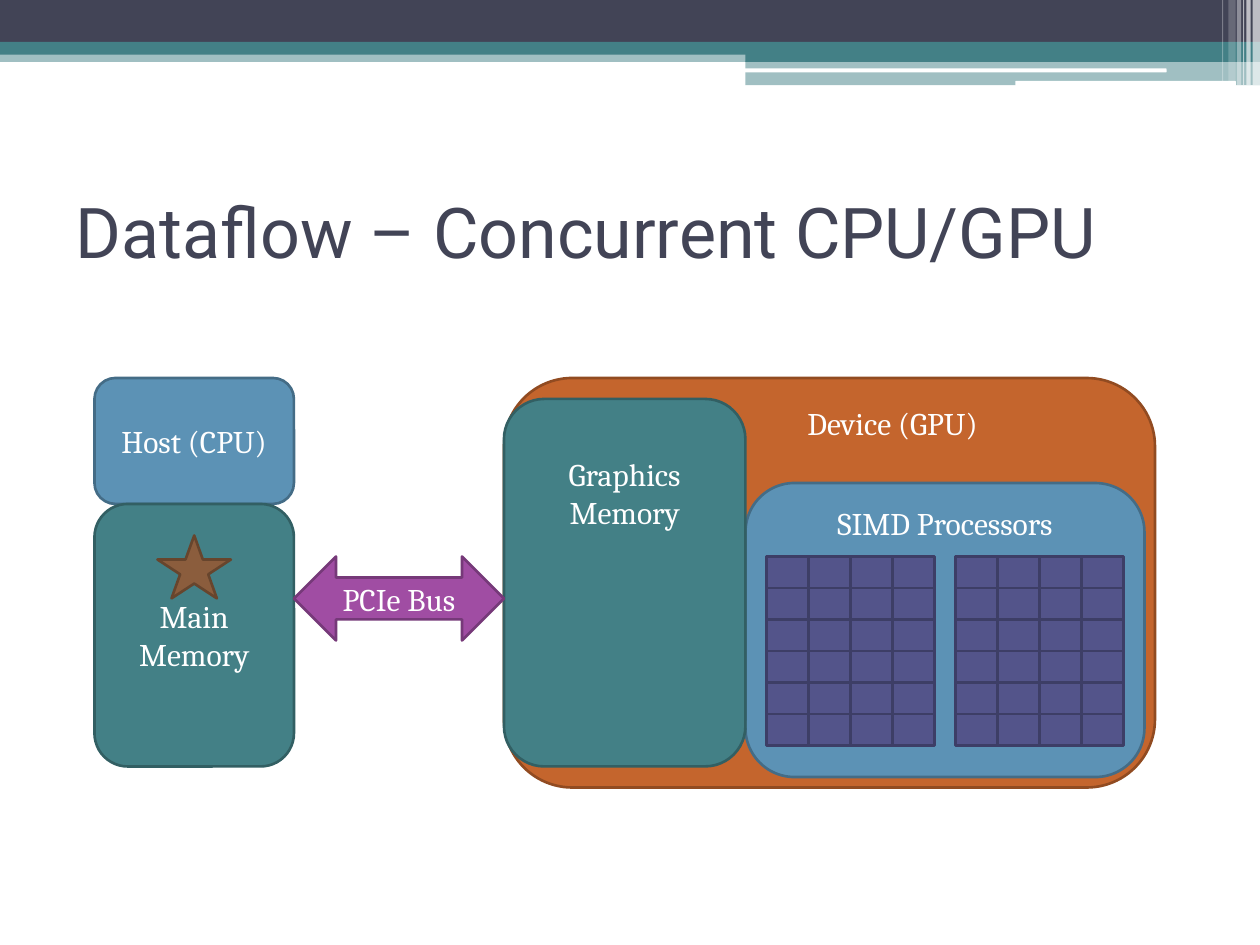
"""Build the slide on dataflow between CPU and GPU."""
import dataclasses
import itertools
import typing

import lxml.etree
import pptx
import pptx.dml.color
import pptx.enum.shapes
import pptx.enum.text
import pptx.oxml.ns
import pptx.util

SCALE = 7620
KIND = pptx.enum.shapes.MSO_SHAPE
ANCHOR = pptx.enum.text.MSO_ANCHOR
ALIGN = pptx.enum.text.PP_ALIGN
HUES = {
    "white": "FFFFFF", "ink": "424456",
    "teal": "438086", "teal_edge": "325F63",
    "blue": "5C92B5", "blue_edge": "446C86",
    "rust": "C4652D", "rust_edge": "914B21",
    "core": "53548A", "core_edge": "3D3E66",
    "plum": "A04DA3", "plum_edge": "763979",
    "brown": "8B5D3D", "brown_edge": "67452D",
}


@dataclasses.dataclass(frozen=True)
class Bar:
    left: int
    top: int
    width: int
    height: int
    hue: str
    alpha: int = 100
    kind: KIND = KIND.RECTANGLE


@dataclasses.dataclass(frozen=True)
class Block:
    left: int
    top: int
    width: int
    height: int
    hue: str
    text: str = ""
    kind: KIND = KIND.FLOWCHART_ALTERNATE_PROCESS
    anchor: ANCHOR = ANCHOR.MIDDLE
    inset: int = 12
    drop: int = 6


BARS = [
    Bar(0, 48, 1200, 11, "teal", 50),
    Bar(0, 0, 1200, 41, "ink"),
    Bar(0, 40, 1200, 12, "teal"),
    Bar(710, 47, 490, 12, "teal"),
    Bar(710, 58, 490, 23, "teal", 50),
    Bar(709, 65, 402, 4, "white", kind=KIND.ROUNDED_RECTANGLE),
    Bar(967, 77, 210, 5, "white", kind=KIND.ROUNDED_RECTANGLE),
    Bar(1193, 0, 7, 81, "white", 65),
    Bar(1187, 0, 4, 81, "white", 65),
    Bar(1184, 0, 1, 81, "white", 60),
    Bar(1178, 0, 4, 81, "white", 40),
    Bar(1170, 0, 7, 77, "white", 20),
    Bar(1164, 0, 1, 77, "white", 30),
]
BACK = [
    Block(90, 360, 190, 120, "blue", "Host (CPU)"),
    Block(90, 480, 190, 250, "teal", "Main Memory"),
    Block(480, 360, 620, 390, "rust", "Device (GPU)", anchor=ANCHOR.TOP, inset=132),
    Block(710, 460, 380, 280, "blue", "SIMD Processors", anchor=ANCHOR.TOP),
]
FRONT = [
    Block(480, 380, 230, 350, "teal", "Graphics Memory", anchor=ANCHOR.TOP, drop=42),
    Block(280, 530, 200, 80, "plum", "PCIe Bus", KIND.LEFT_RIGHT_ARROW),
    Block(150, 510, 70, 60, "brown", kind=KIND.STAR_5_POINT),
]


def px(size: int) -> pptx.util.Emu:
    """Turn px into EMU."""
    return pptx.util.Emu(size * SCALE)


def tint(name: str) -> pptx.dml.color.RGBColor:
    """Look up a colour."""
    return pptx.dml.color.RGBColor.from_string(HUES[name])


def add_form(shapes: typing.Any, item: Bar | Block) -> typing.Any:
    """Add a filled shape without shadow."""
    form = shapes.add_shape(
        item.kind, px(item.left), px(item.top), px(item.width), px(item.height))
    form.shadow.inherit = False
    form.fill.solid()
    form.fill.fore_color.rgb = tint(item.hue)
    return form


def add_text(frame: typing.Any, text: str, face: str, size: int, hue: str, align: ALIGN) -> None:
    """Write one styled run in the first paragraph."""
    line = frame.paragraphs[0]
    line.alignment = align
    run = line.add_run()
    run.text = text
    run.font.name = face
    run.font.size = pptx.util.Pt(size)
    run.font.color.rgb = tint(hue)


def draw_bar(shapes: typing.Any, bar: Bar) -> None:
    """Draw a band of the header."""
    form = add_form(shapes, bar)
    form.line.fill.background()
    if bar.alpha < 100:
        qn = pptx.oxml.ns.qn
        shade = form.element.spPr.find(f"{qn('a:solidFill')}/{qn('a:srgbClr')}")
        lxml.etree.SubElement(shade, qn("a:alpha"), val=str(bar.alpha * 1000))


def draw_block(shapes: typing.Any, block: Block) -> None:
    """Draw an outlined part with its label."""
    form = add_form(shapes, block)
    form.line.color.rgb = tint(block.hue + "_edge")
    form.line.width = pptx.util.Pt(1.5)
    if block.text:
        frame = form.text_frame
        frame.word_wrap = True
        frame.vertical_anchor = block.anchor
        frame.margin_left = px(block.inset)
        frame.margin_top = px(block.drop)
        add_text(frame, block.text, "Cambria", 18, "white", ALIGN.CENTER)


def draw_grid(shapes: typing.Any, left: int, top: int) -> None:
    """Draw a group of six rows of four cores."""
    group = shapes.add_group_shape()
    for row, col in itertools.product(range(6), range(4)):
        draw_block(group.shapes, Block(
            left + col * 40, top + row * 30, 40, 30, "core", kind=KIND.RECTANGLE))


def set_title(title: typing.Any) -> None:
    """Place and fill the title."""
    title.left, title.top, title.width, title.height = map(px, (60, 150, 1080, 140))
    frame = title.text_frame
    frame.word_wrap = True
    frame.auto_size = pptx.enum.text.MSO_AUTO_SIZE.NONE
    frame.vertical_anchor = ANCHOR.MIDDLE
    add_text(frame, "Dataflow – Concurrent CPU/GPU", "Roboto", 40, "ink", ALIGN.LEFT)


def main() -> None:
    """Build and save the deck."""
    deck = pptx.Presentation()
    deck.slide_width, deck.slide_height = px(1200), px(900)
    slide = deck.slides.add_slide(deck.slide_layouts[5])
    shapes = slide.shapes
    set_title(shapes.title)
    for bar in BARS:
        draw_bar(shapes, bar)
    for block in BACK:
        draw_block(shapes, block)
    for left in (910, 730):
        draw_grid(shapes, left, 530)
    for block in FRONT:
        draw_block(shapes, block)
    deck.save("out.pptx")


if __name__ == "__main__":
    main()
